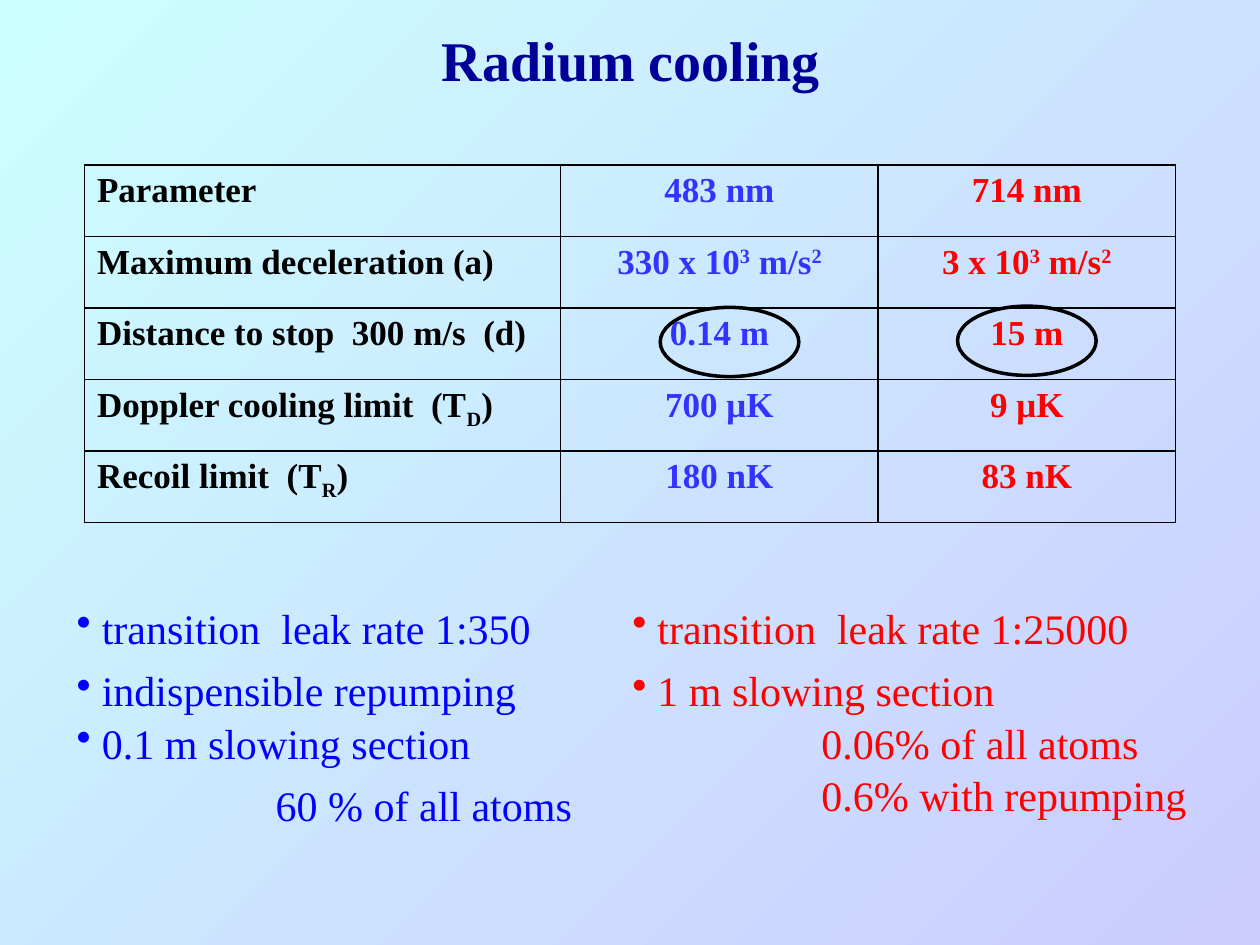
from dataclasses import dataclass

from pptx import Presentation
from pptx.dml.color import RGBColor
from pptx.enum.shapes import MSO_SHAPE as Preset
from pptx.enum.text import MSO_ANCHOR as Anchor, PP_ALIGN as Align
from pptx.oxml import parse_xml
from pptx.oxml.ns import nsdecls
from pptx.util import Emu, Inches, Pt

SLIDE_WIDTH, SLIDE_HEIGHT = Inches(10), Inches(7.5)
FONT = "Times New Roman"
COLOURS = {
    "sky": "CCFFFF",
    "lilac": "CCCCFF",
    "title": "000099",
    "ink": "000000",
    "blue cell": "3333FF",
    "blue": "0000FF",
    "red": "FF0000",
}
BASELINES = {"super": "30000", "sub": "-25000"}


@dataclass(frozen=True)
class Area:
    left: float
    top: float
    width: float
    height: float

    def box(self) -> tuple:
        return (across(self.left), down(self.top), across(self.width), down(self.height))


@dataclass(frozen=True)
class Script:
    text: str
    baseline: str


@dataclass(frozen=True)
class Line:
    text: str
    gap: float = 0
    indent: float = 0.2
    bullet: bool = True


@dataclass(frozen=True)
class Summary:
    area: Area
    colour: str
    lines: tuple


SUPER_2, SUPER_3 = Script("2", "super"), Script("3", "super")
TABLE_AREA = Area(6.7, 17.47, 86.6, 37.87)
COLUMN_WIDTHS = (37.8, 25.2, 23.6)
COLUMN_COLOURS = ("ink", "blue cell", "red")
ROWS = (
    (["Parameter"], ["483 nm"], ["714 nm"]),
    (["Maximum deceleration (a)"],
     ["330 x 10", SUPER_3, " m/s", SUPER_2],
     ["3 x 10", SUPER_3, " m/s", SUPER_2]),
    (["Distance to stop  300 m/s  (d)"], ["0.14 m"], ["15 m"]),
    (["Doppler cooling limit  (T", Script("D", "sub"), ")"], ["700 μK"], ["9 μK"]),
    (["Recoil limit  (T", Script("R", "sub"), ")"], ["180 nK"], ["83 nK"]),
)
SUMMARIES = (
    Summary(Area(5.1, 62.53, 44.9, 22.93), "blue", (
        Line("transition  leak rate 1:350"),
        Line("indispensible repumping", 7),
        Line("0.1 m slowing section", 1),
        Line("60 % of all atoms", 7, 1.58, False),
    )),
    Summary(Area(49.2, 62.53, 48, 22.93), "red", (
        Line("transition  leak rate 1:25000"),
        Line("1 m slowing section", 7),
        Line("0.06% of all atoms", 1, 1.5, False),
        Line("0.6% with repumping", 1, 1.5, False),
    )),
)
HIGHLIGHTS = (Area(52.4, 32.53, 11, 7.33), Area(76, 32.4, 11, 7.33))


def across(percent: float) -> Emu:
    return Emu(round(SLIDE_WIDTH * percent / 100))


def down(percent: float) -> Emu:
    return Emu(round(SLIDE_HEIGHT * percent / 100))


def rgb(name: str) -> RGBColor:
    return RGBColor.from_string(COLOURS[name])


def apply(target, formats: dict) -> None:
    for name, value in formats.items():
        setattr(target, name, value)


def add_run(paragraph, part, size: float, colour: str, bold: bool = False) -> None:
    run = paragraph.add_run()
    run.text = part.text if isinstance(part, Script) else part
    apply(run.font, {"name": FONT, "size": Pt(size), "bold": bold})
    run.font.color.rgb = rgb(colour)
    if isinstance(part, Script):
        run._r.get_or_add_rPr().set("baseline", BASELINES[part.baseline])


def add_text_frame(slide, area: Area, top_margin: float):
    frame = slide.shapes.add_textbox(*area.box()).text_frame
    apply(frame, {"word_wrap": True, "vertical_anchor": Anchor.TOP,
                  "margin_top": Inches(top_margin)})
    return frame


def add_title(slide) -> None:
    paragraph = add_text_frame(slide, Area(5.1, 1.2, 90, 11.6), 0.11).paragraphs[0]
    paragraph.alignment = Align.CENTER
    add_run(paragraph, "Radium cooling", 32, "title", True)


def add_borders(cell) -> None:
    properties = cell._tc.get_or_add_tcPr()
    for position, side in enumerate(("lnL", "lnR", "lnT", "lnB")):
        properties.insert(position, parse_xml(
            f'<a:{side} {nsdecls("a")} w="{Pt(1)}"><a:solidFill>'
            f'<a:srgbClr val="{COLOURS["ink"]}"/></a:solidFill></a:{side}>'))


def add_parameter_table(slide) -> None:
    table = slide.shapes.add_table(len(ROWS), len(COLUMN_WIDTHS), *TABLE_AREA.box()).table
    apply(table, {"first_row": False, "horz_banding": False})
    for column, width in zip(table.columns, COLUMN_WIDTHS):
        column.width = across(width)
    for row_index, row in enumerate(ROWS):
        for column_index, parts in enumerate(row):
            cell = table.cell(row_index, column_index)
            cell.fill.background()
            add_borders(cell)
            paragraph = cell.text_frame.paragraphs[0]
            paragraph.alignment = Align.CENTER if column_index else Align.LEFT
            for part in parts:
                add_run(paragraph, part, 20, COLUMN_COLOURS[column_index], True)


def add_summary(slide, summary: Summary) -> None:
    frame = add_text_frame(slide, summary.area, 0.09)
    for index, line in enumerate(summary.lines):
        paragraph = frame.add_paragraph() if index else frame.paragraphs[0]
        if index:
            paragraph.space_before = Pt(line.gap)
        properties = paragraph._p.get_or_add_pPr()
        properties.set("marL", str(Inches(line.indent)))
        if line.bullet:
            properties.set("indent", str(-Inches(line.indent)))
            properties.append(parse_xml(f'<a:buChar {nsdecls("a")} char="•"/>'))
        add_run(paragraph, line.text, 24, summary.colour)


def add_highlight(slide, area: Area) -> None:
    shape = slide.shapes.add_shape(Preset.OVAL, *area.box())
    shape.shadow.inherit = False
    shape.fill.background()
    shape.line.color.rgb = rgb("ink")
    shape.line.width = Pt(2)


def paint_background(slide) -> None:
    fill = slide.background.fill
    fill.gradient()
    fill.gradient_angle = 315
    for stop, position, colour in zip(fill.gradient_stops, (0, 1), ("sky", "lilac")):
        stop.position = position
        stop.color.rgb = rgb(colour)


def main() -> None:
    presentation = Presentation()
    apply(presentation, {"slide_width": SLIDE_WIDTH, "slide_height": SLIDE_HEIGHT})
    slide = presentation.slides.add_slide(presentation.slide_layouts[6])
    paint_background(slide)
    add_title(slide)
    add_parameter_table(slide)
    for summary in SUMMARIES:
        add_summary(slide, summary)
    for area in HIGHLIGHTS:
        add_highlight(slide, area)
    presentation.save("out.pptx")


if __name__ == "__main__":
    main()
